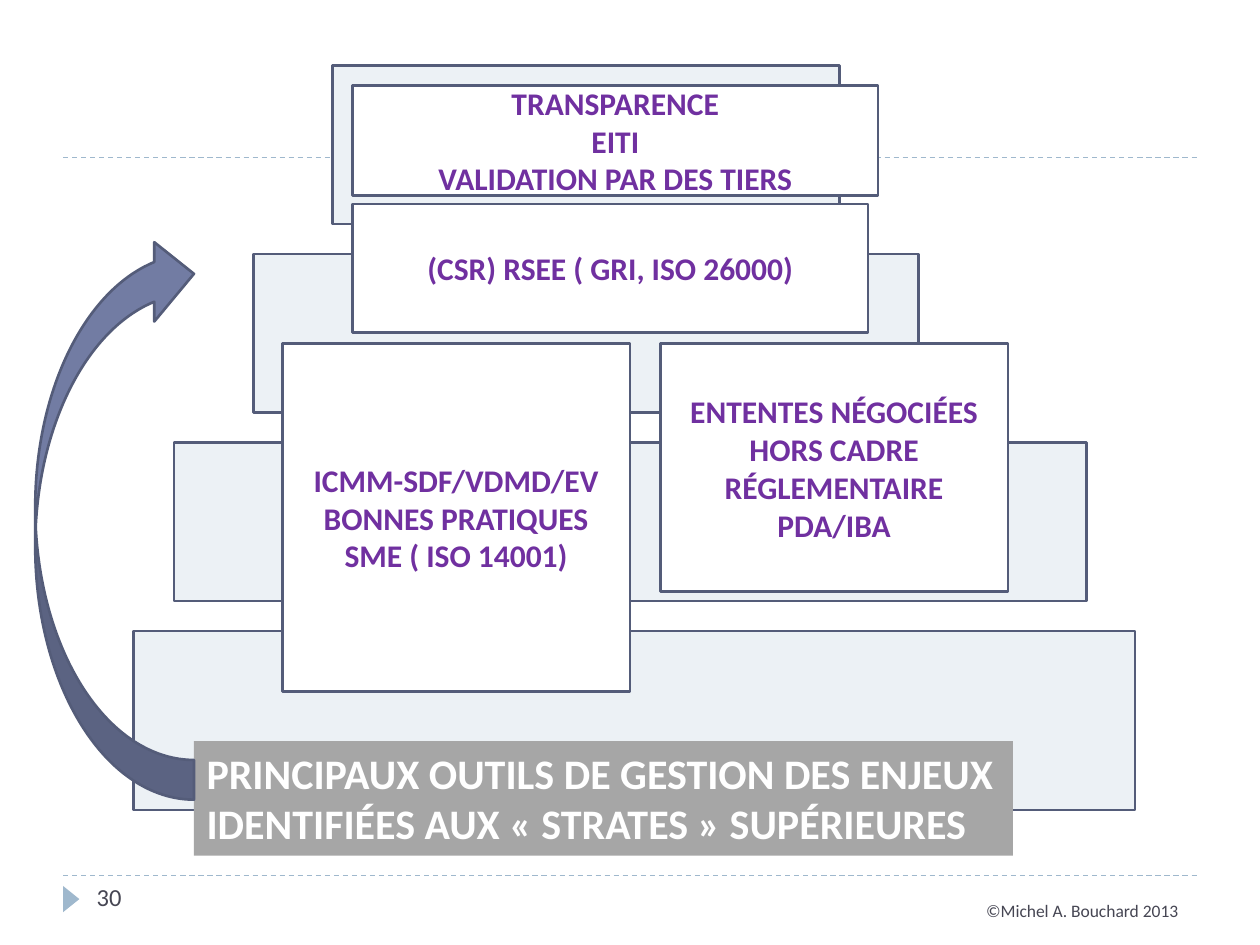
from dataclasses import dataclass

from pptx import Presentation
from pptx.dml.color import RGBColor
from pptx.enum.dml import MSO_LINE
from pptx.enum.shapes import MSO_CONNECTOR, MSO_SHAPE
from pptx.enum.text import MSO_ANCHOR, MSO_AUTO_SIZE, PP_ALIGN
from pptx.oxml.ns import qn
from pptx.shapes.autoshape import Shape
from pptx.slide import Slide
from pptx.text.text import TextFrame
from pptx.util import Cm, Pt
from lxml.etree import SubElement

FONT = "Calibri"
OUTLINE, STRATUM_FILL, WHITE = "545C79", "ECF1F5", "FFFFFF"
PURPLE, DARK, PALE_BLUE = "7030A0", "464653", "9FB8CD"
FIRST_STRATUM_TOP, STRATUM_PITCH = 1.32, 3.8


@dataclass(frozen=True)
class Area:
    """A rectangle in centimetres."""
    left: float
    top: float
    width: float
    height: float

    def lengths(self) -> tuple[Cm, Cm, Cm, Cm]:
        return Cm(self.left), Cm(self.top), Cm(self.width), Cm(self.height)


@dataclass(frozen=True)
class Stratum:
    left: float
    width: float
    height: float = 3.2


@dataclass(frozen=True)
class Card:
    area: Area
    lines: tuple[str, ...]


STRATA = (
    Stratum(6.71, 10.21),
    Stratum(5.11, 13.41),
    Stratum(3.51, 18.39),
    Stratum(2.69, 20.19, 3.61),
)
CARDS = (
    Card(Area(7.11, 4.11, 10.39, 2.59), ("(CSR) RSEE ( GRI, ISO 26000)",)),
    Card(Area(7.11, 1.73, 10.59, 2.21),
         ("TRANSPARENCE", "EITI", "VALIDATION PAR DES TIERS")),
    Card(Area(5.69, 6.93, 7.01, 7.01),
         ("ICMM-SDF/VDMD/EV", "BONNES PRATIQUES", "SME ( ISO 14001)")),
    Card(Area(13.31, 6.93, 7.01, 5),
         ("ENTENTES NÉGOCIÉES HORS CADRE RÉGLEMENTAIRE", "PDA/IBA")),
)
BANNER = Card(Area(3.91, 14.94, 16.51, 2.31),
              ("PRINCIPAUX OUTILS DE GESTION DES ENJEUX",
               "IDENTIFIÉES AUX « STRATES » SUPÉRIEURES"))


def color(value: str) -> RGBColor:
    return RGBColor.from_string(value)


def write(frame: TextFrame, lines: tuple[str, ...], size: int, ink: str,
          align: PP_ALIGN, bold: bool = False) -> None:
    frame.text = "\n".join(lines)
    for para in frame.paragraphs:
        para.alignment = align
        para.font.name = FONT
        para.font.size = Pt(size)
        para.font.bold = bold
        para.font.color.rgb = color(ink)


def add_box(page: Slide, kind: MSO_SHAPE, area: Area, fill: str,
            outline: str | None = OUTLINE) -> Shape:
    box = page.shapes.add_shape(kind, *area.lengths())
    box.shadow.inherit = False
    box.fill.solid()
    box.fill.fore_color.rgb = color(fill)
    if outline:
        box.line.color.rgb = color(outline)
        box.line.width = Pt(1.5)
    else:
        box.line.fill.background()
    return box


def add_card(page: Slide, card: Card) -> None:
    box = add_box(page, MSO_SHAPE.RECTANGLE, card.area, WHITE)
    box.text_frame.vertical_anchor = MSO_ANCHOR.MIDDLE
    write(box.text_frame, card.lines, 18, PURPLE, PP_ALIGN.CENTER, bold=True)


def add_rule(page: Slide, top: float) -> None:
    rule = page.shapes.add_connector(MSO_CONNECTOR.STRAIGHT,
                                     Cm(1.27), Cm(top), Cm(24.13), Cm(top))
    rule.line.color.rgb = color(PALE_BLUE)
    rule.line.width = Pt(0.75)
    rule.line.dash_style = MSO_LINE.DASH
    SubElement(rule._element.spPr, qn("a:effectLst"))


def add_note(page: Slide, area: Area, text: str, size: int, align: PP_ALIGN) -> None:
    box = page.shapes.add_textbox(*area.lengths())
    box.text_frame.word_wrap = True
    write(box.text_frame, (text,), size, DARK, align)


def place_title(page: Slide) -> None:
    """Turn the title placeholder into the banner, in front of the strata."""
    title = page.shapes.title
    title.left, title.top, title.width, title.height = BANNER.area.lengths()
    title.fill.solid()
    title.fill.fore_color.rgb = color("A6A6A6")
    title.text_frame.auto_size = MSO_AUTO_SIZE.NONE
    title.text_frame.word_wrap = False
    title.text_frame.vertical_anchor = MSO_ANCHOR.TOP
    write(title.text_frame, BANNER.lines, 24, WHITE, PP_ALIGN.LEFT, bold=True)
    page.shapes._spTree.append(title._element)


def main() -> None:
    deck = Presentation()
    deck.slide_width, deck.slide_height = Cm(25.4), Cm(19.05)
    page = deck.slides.add_slide(deck.slide_layouts[5])

    for top in (17.65, 3.18):
        add_rule(page, top)
    marker = add_box(page, MSO_SHAPE.ISOSCELES_TRIANGLE,
                     Area(1.17, 17.96, 0.53, 0.33), PALE_BLUE, None)
    marker.rotation = 90

    for index, stratum in enumerate(STRATA):
        top = FIRST_STRATUM_TOP + index * STRATUM_PITCH
        add_box(page, MSO_SHAPE.RECTANGLE,
                Area(stratum.left, top, stratum.width, stratum.height), STRATUM_FILL)
    for card in CARDS:
        add_card(page, card)

    place_title(page)
    arrow = add_box(page, MSO_SHAPE.CURVED_LEFT_ARROW,
                    Area(0.71, 4.72, 3.2, 11.4), "727CA3")
    arrow.rotation = 180

    add_note(page, Area(1.7, 17.65, 5.51, 1.02), "30", 14, PP_ALIGN.LEFT)
    add_note(page, Area(19.3, 18.01, 4.7, 0.66), "©Michel A. Bouchard 2013",
             10, PP_ALIGN.RIGHT)
    deck.save("out.pptx")


if __name__ == "__main__":
    main()
